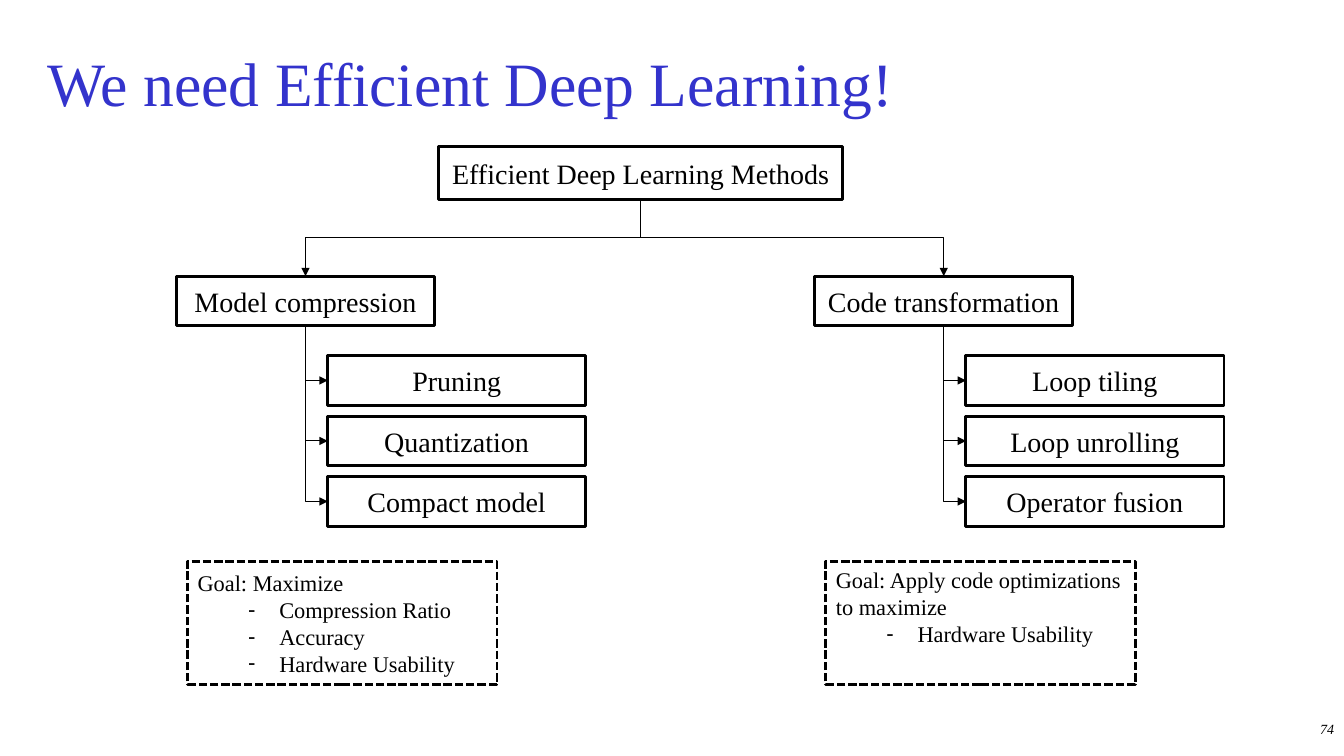
from dataclasses import dataclass

from lxml.etree import SubElement
from pptx import Presentation
from pptx.dml.color import RGBColor
from pptx.enum.dml import MSO_LINE as Dash
from pptx.enum.shapes import MSO_CONNECTOR as Link, MSO_SHAPE as Form
from pptx.enum.text import MSO_ANCHOR as Anchor, MSO_AUTO_SIZE as Fit, PP_ALIGN as Align
from pptx.oxml.ns import qn
from pptx.shapes.autoshape import Shape
from pptx.slide import Slide
from pptx.util import Inches, Pt

FONT = "Times New Roman"
BLACK = "000000"
WHITE = "FFFFFF"
BLUE = "3333CC"


@dataclass
class Branch:
    name: str
    left: float
    steps: list[str]
    goal: str
    aims: list[str]
    anchor: Anchor


BRANCHES = [
    Branch("Model compression", 1.75,
           ["Pruning", "Quantization", "Compact model"],
           "Goal: Maximize",
           ["Compression Ratio", "Accuracy", "Hardware Usability"],
           Anchor.MIDDLE),
    Branch("Code transformation", 8.08,
           ["Loop tiling", "Loop unrolling", "Operator fusion"],
           "Goal: Apply code optimizations to maximize",
           ["Hardware Usability"],
           Anchor.TOP),
]


def tint(color, code: str) -> None:
    color.rgb = RGBColor.from_string(code)


def place(shape, left: float, top: float, width: float, height: float) -> None:
    shape.left, shape.top = Inches(left), Inches(top)
    shape.width, shape.height = Inches(width), Inches(height)


def write(para, text: str, size: float, code: str = BLACK, slant: bool = False) -> None:
    run = para.add_run()
    run.text = text
    run.font.name = FONT
    run.font.size = Pt(size)
    run.font.italic = slant
    tint(run.font.color, code)


def frame(shape: Shape) -> None:
    shape.fill.solid()
    tint(shape.fill.fore_color, WHITE)
    shape.line.width = Pt(2)
    tint(shape.line.color, BLACK)


def add_box(slide: Slide, text: str, left: float, top: float,
            width: float = 2.56, height: float = 0.49) -> Shape:
    box = slide.shapes.add_shape(Form.RECTANGLE, Inches(left), Inches(top),
                                 Inches(width), Inches(height))
    box.shadow.inherit = False
    frame(box)
    box.text_frame.word_wrap = True
    para = box.text_frame.paragraphs[0]
    para.alignment = Align.CENTER
    write(para, text, 20)
    return box


def add_bend(slide: Slide, start: Shape, end: Shape, side: int) -> None:
    x1, y1 = start.left + start.width // 2, start.top + start.height
    if side == 0:
        x2, y2 = end.left + end.width // 2, end.top
    else:
        x2, y2 = end.left, end.top + end.height // 2
    bend = slide.shapes.add_connector(Link.ELBOW, x1, y1, x2, y2)
    bend.begin_connect(start, 2)
    bend.end_connect(end, side)
    wide, high = abs(x2 - x1), y2 - y1
    bend.left, bend.top = (x1 + x2 - high) // 2, (y1 + y2 - wide) // 2
    bend.width, bend.height = high, wide
    right = x2 > x1
    props = bend._element.spPr
    form = props.find(qn("a:xfrm"))
    form.set("rot", "16200000" if right else "5400000")
    form.set("flipH", "1" if right else "0")
    if side == 1:
        props.find(qn("a:prstGeom")).set("prst", "bentConnector2")
    bend.line.width = Pt(0.75)
    tint(bend.line.color, BLACK)
    SubElement(props.find(qn("a:ln")), qn("a:tailEnd"), type="triangle")
    SubElement(props, qn("a:effectLst"))


def fill_goal(goal: Shape, branch: Branch) -> None:
    place(goal, branch.left + 0.11, 5.57, 3.07, 1.22)
    frame(goal)
    goal.line.dash_style = Dash.SQUARE_DOT
    body = goal.text_frame
    body.auto_size = Fit.NONE
    body.word_wrap = True
    body.vertical_anchor = branch.anchor
    for row, text in enumerate([branch.goal, *branch.aims]):
        para = body.add_paragraph() if row else body.paragraphs[0]
        props = para._p.get_or_add_pPr()
        if row:
            para.level = 1
            props.set("marL", str(Inches(0.81)))
            props.set("indent", str(Inches(-0.31)))
            SubElement(props, qn("a:buChar"), char="-")
        else:
            props.set("marL", "0")
            props.set("indent", "0")
            SubElement(props, qn("a:buNone"))
        para.space_before = Pt(0)
        write(para, text, 16)


def add_title(slide: Slide) -> None:
    title = slide.shapes.title
    place(title, 0.37, 0.4, 12.6, 0.83)
    title.text_frame.auto_size = Fit.NONE
    title.text_frame.vertical_anchor = Anchor.MIDDLE
    para = title.text_frame.paragraphs[0]
    para.alignment = Align.LEFT
    write(para, "We need Efficient Deep Learning!", 44, BLUE)


def add_page(slide: Slide) -> None:
    page = slide.shapes.add_textbox(Inches(12.65), Inches(7.1), Inches(0.68), Inches(0.4))
    page.text_frame.word_wrap = True
    para = page.text_frame.paragraphs[0]
    para.alignment = Align.RIGHT
    write(para, "74", 10, slant=True)


def main() -> None:
    deck = Presentation()
    deck.slide_width, deck.slide_height = Inches(13.33), Inches(7.5)
    slide = deck.slides.add_slide(deck.slide_layouts[3])
    add_title(slide)
    add_page(slide)
    root = add_box(slide, "Efficient Deep Learning Methods", 4.35, 1.45, 4.01, 0.53)
    goals = list(slide.placeholders)[1:]
    for branch, goal in zip(BRANCHES, goals):
        head = add_box(slide, branch.name, branch.left, 2.74)
        add_bend(slide, root, head, 0)
        for row, step in enumerate(branch.steps):
            box = add_box(slide, step, branch.left + 1.5, 3.53 + 0.6 * row)
            add_bend(slide, head, box, 1)
        fill_goal(goal, branch)
    deck.save("out.pptx")


if __name__ == "__main__":
    main()
